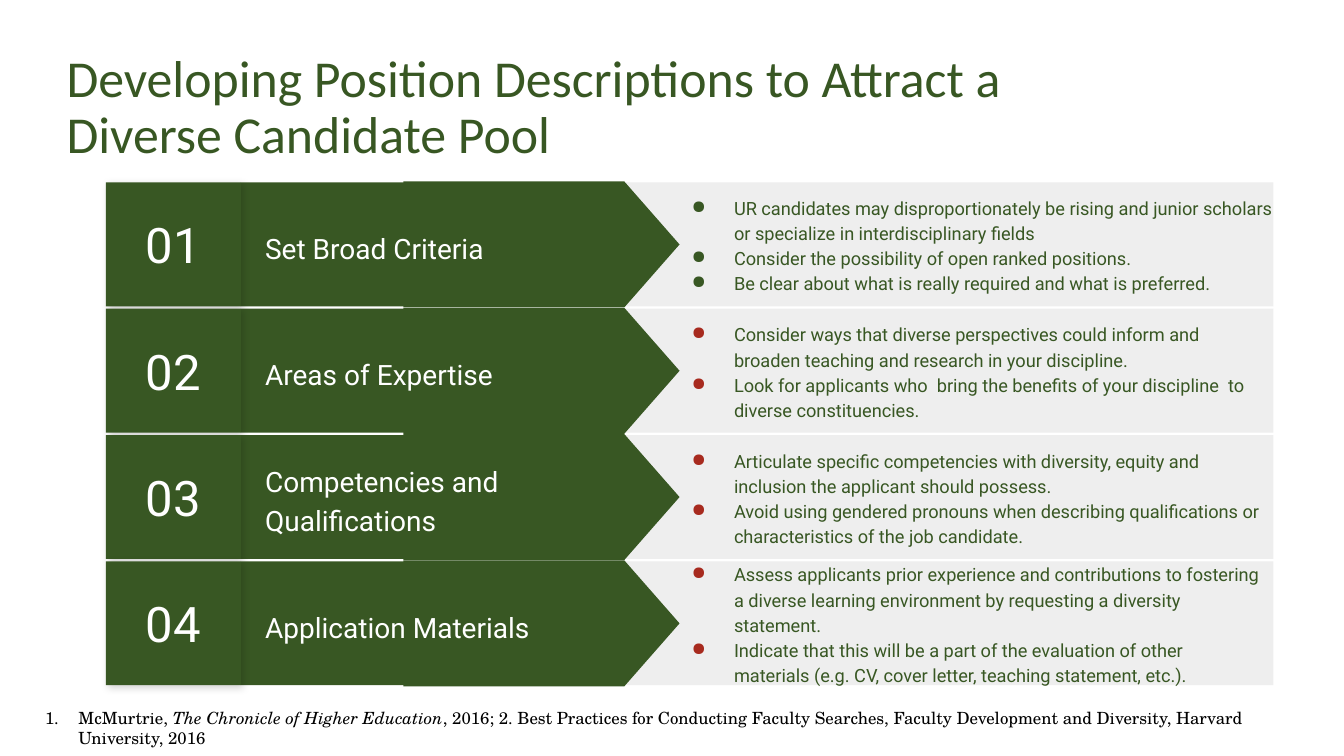
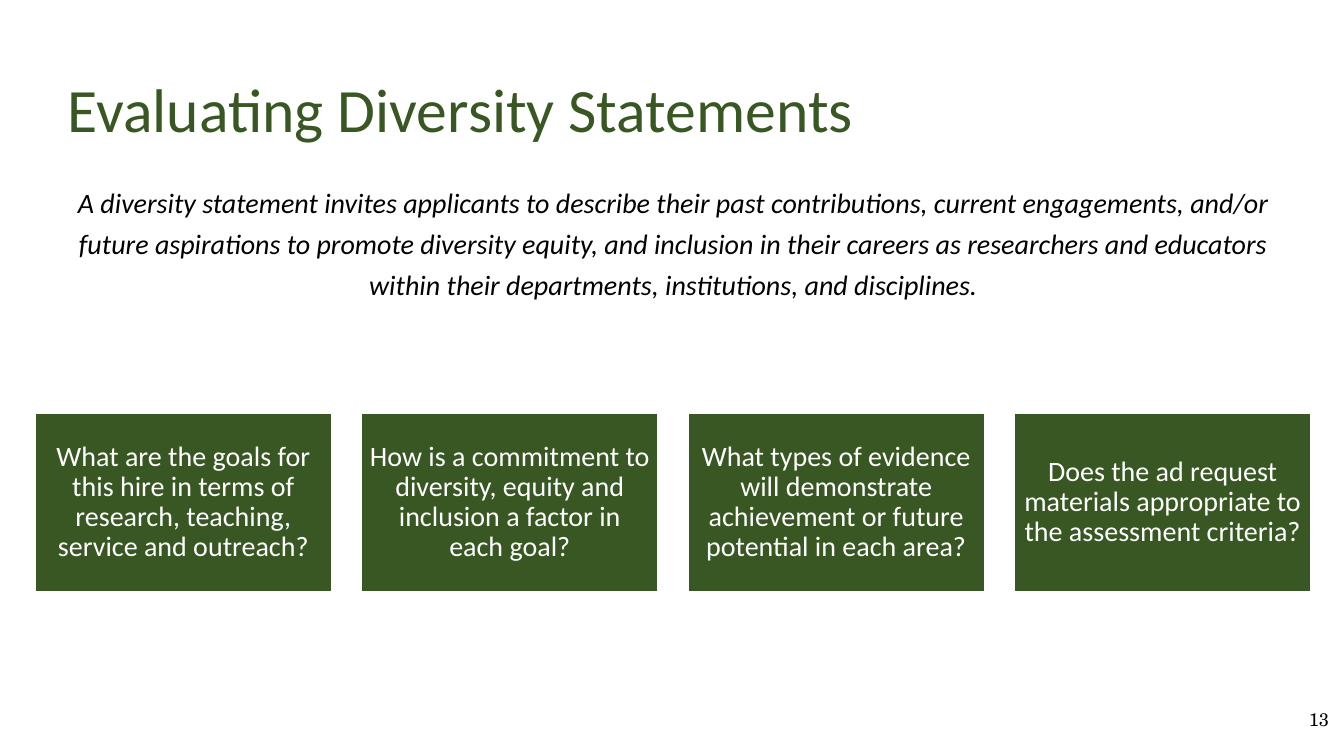
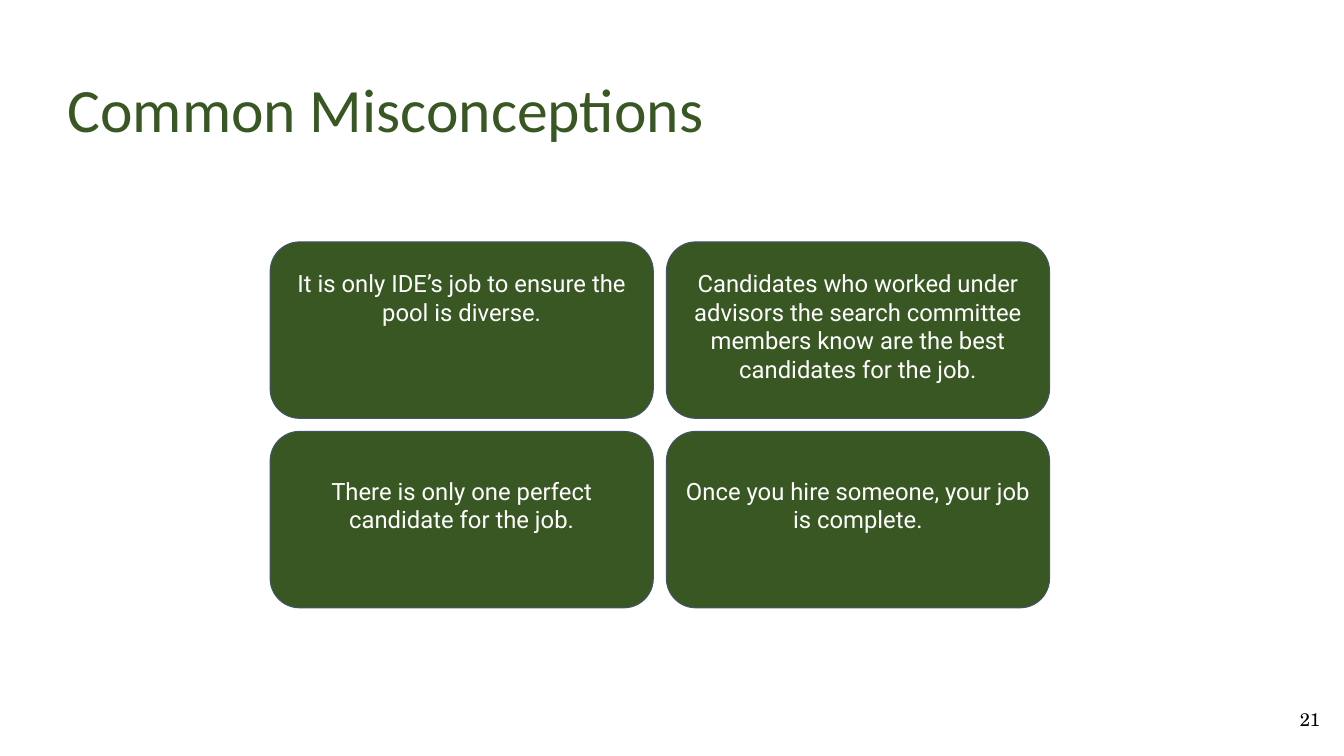
import collections

import pptx
import pptx.dml.color
import pptx.enum.shapes
import pptx.enum.text
import pptx.oxml
import pptx.oxml.ns
import pptx.util

Inches = pptx.util.Inches
Pt = pptx.util.Pt
RGBColor = pptx.dml.color.RGBColor
Shapes = pptx.enum.shapes.MSO_SHAPE
Align = pptx.enum.text.PP_ALIGN
Anchor = pptx.enum.text.MSO_ANCHOR

GREEN = RGBColor(0x38, 0x57, 0x23)
RED = RGBColor(0xA7, 0x2A, 0x1E)
GREY = RGBColor(0xEE, 0xEE, 0xEE)
SLATE = RGBColor(0x44, 0x54, 0x6A)
WHITE = RGBColor(0xFF, 0xFF, 0xFF)
BLACK = RGBColor(0, 0, 0)

HEADING_FONT = "Calibri"
LABEL_FONT = "Roboto"
NOTE_FONT = "TeX Gyre Schola"
TITLE_ONLY = 5

Box = collections.namedtuple("Box", "left top width height")
Style = collections.namedtuple("Style", "font size color italic", defaults=[False])

LABEL_STYLE = Style(LABEL_FONT, 20, WHITE)
NUMBER_STYLE = Style(LABEL_FONT, 35, WHITE)
BULLET_STYLE = Style(LABEL_FONT, 13, GREEN)
CARD_STYLE = Style(LABEL_FONT, 17, WHITE)
QUESTION_STYLE = Style(HEADING_FONT, 20, WHITE)
STATEMENT_STYLE = Style(HEADING_FONT, 20, BLACK, True)
FOOTNOTE_STYLE = Style(NOTE_FONT, 12, BLACK)
PAGE_NUMBER_STYLE = Style(NOTE_FONT, 13, BLACK)

# Label, bullet colour, width of the bullet text, bullets
CRITERIA = [
    ("Set Broad Criteria", GREEN, 6.35, [
        "UR candidates may disproportionately be rising and junior scholars "
        "or specialize in interdisciplinary fields",
        "Consider the possibility of open ranked positions.",
        "Be clear about what is really required and what is preferred."]),
    ("Areas of Expertise", RED, 6.15, [
        "Consider ways that diverse perspectives could inform and broaden "
        "teaching and research in your discipline.",
        "Look for applicants who  bring the benefits of your discipline  to "
        "diverse constituencies."]),
    ("Competencies and Qualifications", RED, 6.15, [
        "Articulate specific competencies with diversity, equity and inclusion "
        "the applicant should possess.",
        "Avoid using gendered pronouns when describing qualifications or "
        "characteristics of the job candidate."]),
    ("Application Materials", RED, 6.15, [
        "Assess applicants prior experience and contributions to fostering a "
        "diverse learning environment by requesting a diversity statement.",
        "Indicate that this will be a part of the evaluation of other materials "
        "(e.g. CV, cover letter, teaching statement, etc.)."]),
]

STATEMENT = (
    "A diversity statement invites applicants to describe their past contributions, "
    "current engagements, and/or future aspirations to promote diversity equity, and "
    "inclusion in their careers as researchers and educators within their departments, "
    "institutions, and disciplines.")

QUESTIONS = [
    "What are the goals for this hire in terms of research, teaching, service and outreach?",
    "How is a commitment to diversity, equity and inclusion a factor in each goal?",
    "What types of evidence will demonstrate achievement or future potential in each area?",
    "Does the ad request materials appropriate to the assessment criteria?",
]

MISCONCEPTIONS = [
    ["It is only IDE’s job to ensure the pool is diverse.",
     "Candidates who worked under advisors the search committee members know "
     "are the best candidates for the job."],
    ["There is only one perfect candidate for the job.",
     "Once you hire someone, your job is complete."],
]


def place(box):
    return [Inches(length) for length in box]


def style_span(span, style):
    span.font.name = style.font
    span.font.size = Pt(style.size)
    span.font.color.rgb = style.color
    span.font.italic = style.italic


def write(shape, text, style, align=Align.LEFT, anchor=Anchor.TOP, insets=(0.1,) * 4,
          spacing=1.0):
    """Fill a shape with one paragraph per line; insets run left, top, right, bottom."""
    frame = shape.text_frame
    frame.word_wrap = True
    frame.auto_size = pptx.enum.text.MSO_AUTO_SIZE.NONE
    frame.vertical_anchor = anchor
    (frame.margin_left, frame.margin_top,
     frame.margin_right, frame.margin_bottom) = place(insets)
    frame.text = text
    for para in frame.paragraphs:
        para.alignment = align
        para.line_spacing = spacing
        for span in para.runs:
            style_span(span, style)
    return frame


def add_text(page, box, text, style, **layout):
    return write(page.shapes.add_textbox(*place(box)), text, style, **layout)


def add_block(page, kind, box, fill, line=None, line_width=1):
    shape = page.shapes.add_shape(kind, *place(box))
    shape.shadow.inherit = False
    shape.fill.solid()
    shape.fill.fore_color.rgb = fill
    if line is None:
        shape.line.fill.background()
    else:
        shape.line.color.rgb = line
        shape.line.width = Pt(line_width)
    return shape


def add_soft_shadow(shape):
    effects = shape._element.spPr.find(pptx.oxml.ns.qn("a:effectLst"))
    effects.append(pptx.oxml.parse_xml(
        f'<a:outerShdw {pptx.oxml.ns.nsdecls("a")} blurRad="71120" dist="27940" '
        'dir="2700000"><a:srgbClr val="000000"><a:alpha val="17000"/></a:srgbClr>'
        '</a:outerShdw>'))


def add_bullet(para, marker, margin, hang, color=None):
    """Give a paragraph a hanging indent and a marker element such as buChar."""
    properties = para._p.get_or_add_pPr()
    properties.set("marL", str(Inches(margin)))
    properties.set("indent", str(-Inches(hang)))
    namespace = pptx.oxml.ns.nsdecls("a")
    if color is not None:
        properties.append(pptx.oxml.parse_xml(
            f'<a:buClr {namespace}><a:srgbClr val="{color}"/></a:buClr>'))
    properties.append(pptx.oxml.parse_xml(f"<a:{marker} {namespace}/>"))


def add_page(deck, title, box=Box(0.67, 0.9, 12, 0.55), size=44, anchor=Anchor.BOTTOM,
             inset=0):
    page = deck.slides.add_slide(deck.slide_layouts[TITLE_ONLY])
    heading = page.shapes.title
    heading.left, heading.top, heading.width, heading.height = place(box)
    write(heading, title, Style(HEADING_FONT, size, GREEN), anchor=anchor,
          insets=(inset,) * 4, spacing=0.9)
    return page


def add_page_number(page, number, left):
    add_text(page, Box(left, 6.93, 0.8, 0.57), str(number), PAGE_NUMBER_STYLE,
             align=Align.RIGHT)


def add_criterion(page, box, number, label, bullet_color, bullet_width, bullets):
    """Draw one row: number, label on an arrow, and bullets on a grey panel."""
    left, top, _, height = box
    number_width, panel_offset, text_offset = 1.34, 4.15, 5.43
    point_left, point_length, point_height = 2.95, 2.74, 1.25
    middle = top + height / 2
    insets = (0.13,) * 4

    add_block(page, Shapes.RECTANGLE,
              Box(left + panel_offset, top, box.width - panel_offset, height), GREY)
    add_block(page, Shapes.RECTANGLE, Box(left + number_width, top, 3.58, height), GREEN)
    point = add_block(page, Shapes.FLOWCHART_OFFPAGE_CONNECTOR,
                      Box(left + point_left + (point_length - point_height) / 2,
                          middle - point_length / 2, point_height, point_length), GREEN)
    point.rotation = 270
    add_text(page, Box(left + 1.45, top + 0.15, 3.77, 0.95), label, LABEL_STYLE,
             anchor=Anchor.MIDDLE, insets=insets, spacing=1.15)

    tile = add_block(page, Shapes.RECTANGLE, Box(left, top, number_width, height), GREEN)
    add_soft_shadow(tile)
    write(tile, f"{number:02d}", NUMBER_STYLE, align=Align.CENTER,
          anchor=Anchor.MIDDLE, insets=insets)

    frame = add_text(page, Box(left + text_offset, top, bullet_width, height),
                     "\n".join(bullets), BULLET_STYLE, anchor=Anchor.MIDDLE,
                     insets=insets, spacing=1.15)
    for para in frame.paragraphs:
        add_bullet(para, 'buChar char="●"', 0.67, 0.42, bullet_color)


def add_footnote(page, box):
    frame = add_text(page, box, "McMurtrie, ", FOOTNOTE_STYLE)
    para = frame.paragraphs[0]
    add_bullet(para, 'buAutoNum type="arabicPeriod"', 0.5, 0.33)
    for text, italic in [
            ("The Chronicle of Higher Education", True),
            (", 2016; 2. Best Practices for Conducting Faculty Searches, Faculty "
             "Development and Diversity, Harvard University, 2016", False)]:
        span = para.add_run()
        span.text = text
        style_span(span, FOOTNOTE_STYLE._replace(italic=italic))


def add_questions(page, box, gap=0.3):
    width = (box.width - gap * (len(QUESTIONS) - 1)) / len(QUESTIONS)
    for column, question in enumerate(QUESTIONS):
        tile = add_block(page, Shapes.RECTANGLE,
                         Box(box.left + column * (width + gap), box.top, width, box.height),
                         GREEN, WHITE)
        write(tile, question, QUESTION_STYLE, align=Align.CENTER, anchor=Anchor.MIDDLE,
              insets=(0.08,) * 4, spacing=0.9)


def add_misconceptions(page, box, gap=0.13):
    width, height = (box.width - gap) / 2, (box.height - gap) / 2
    for row, (texts, text_top) in enumerate(zip(MISCONCEPTIONS, (0.18, 0.36))):
        for column, text in enumerate(texts):
            card = add_block(page, Shapes.ROUNDED_RECTANGLE,
                             Box(box.left + column * (width + gap),
                                 box.top + row * (height + gap), width, height),
                             GREEN, SLATE, 0.75)
            write(card, text, CARD_STYLE, align=Align.CENTER,
                  insets=(0.02, text_top, 0.02, 0.02))


def build_descriptions(deck):
    page = add_page(deck, "Developing Position Descriptions to Attract a Diverse Candidate Pool",
                    Box(0.56, 0.42, 10.91, 1.14), 37, Anchor.TOP, 0.1)
    for index, criterion in enumerate(CRITERIA):
        add_criterion(page, Box(1.05, 1.81 + index * 1.253, 11.58, 1.23), index + 1, *criterion)
    add_footnote(page, Box(0.18, 6.92, 12.85, 0.4))


def build_statements(deck):
    page = add_page(deck, "Evaluating Diversity Statements")
    add_text(page, Box(0.69, 1.76, 11.98, 1.29), STATEMENT, STATEMENT_STYLE,
             align=Align.CENTER, insets=(0,) * 4, spacing=1.23)
    add_questions(page, Box(0.35, 4.1, 12.65, 1.77))
    add_page_number(page, 13, 12.48)


def build_misconceptions(deck):
    page = add_page(deck, "Common Misconceptions")
    add_misconceptions(page, Box(2.68, 2.4, 7.73, 3.63))
    add_page_number(page, 21, 12.39)


def main():
    deck = pptx.Presentation()
    deck.slide_width, deck.slide_height = Inches(13.33), Inches(7.5)
    build_descriptions(deck)
    build_statements(deck)
    build_misconceptions(deck)
    deck.save("out.pptx")


if __name__ == "__main__":
    main()
